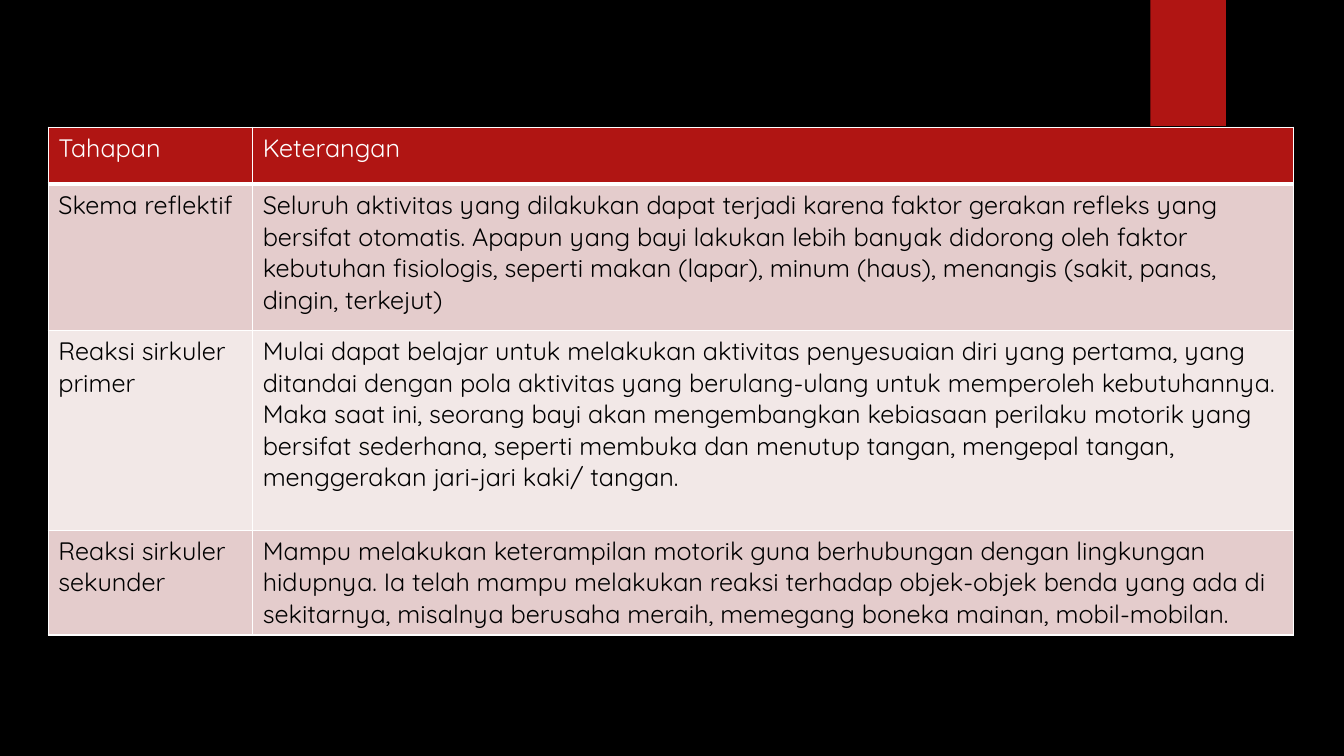
import lxml.etree
import pptx
import pptx.dml.color
import pptx.enum.shapes
import pptx.oxml.ns
import pptx.util

Pt = pptx.util.Pt
RGBColor = pptx.dml.color.RGBColor
qn = pptx.oxml.ns.qn

BLACK = RGBColor(0x00, 0x00, 0x00)
WHITE = RGBColor(0xFF, 0xFF, 0xFF)
RED = RGBColor(0xB0, 0x15, 0x13)
ROSE = RGBColor(0xE4, 0xCC, 0xCC)
PALE = RGBColor(0xF2, 0xE8, 0xE7)

ROWS = [
    ("Tahapan", "Keterangan"),
    ("Skema reflektif",
     "Seluruh aktivitas yang dilakukan dapat terjadi karena faktor gerakan refleks yang "
     "bersifat otomatis. Apapun yang bayi lakukan lebih banyak didorong oleh faktor "
     "kebutuhan fisiologis, seperti makan (lapar), minum (haus), menangis (sakit, panas, "
     "dingin, terkejut)"),
    ("Reaksi sirkuler primer",
     "Mulai dapat belajar untuk melakukan aktivitas penyesuaian diri yang pertama, yang "
     "ditandai dengan pola aktivitas yang berulang-ulang untuk memperoleh kebutuhannya. "
     "Maka saat ini, seorang bayi akan mengembangkan kebiasaan perilaku motorik yang "
     "bersifat sederhana, seperti membuka dan menutup tangan, mengepal tangan, "
     "menggerakan jari-jari kaki/ tangan."),
    ("Reaksi sirkuler sekunder",
     "Mampu melakukan keterampilan motorik guna berhubungan dengan lingkungan "
     "hidupnya. Ia telah mampu melakukan reaksi terhadap objek-objek benda yang ada di "
     "sekitarnya, misalnya berusaha meraih, memegang boneka mainan, mobil-mobilan."),
]


class Deck:
    font = {"name": "Quicksand", "size": Pt(18), "bold": False}

    def __init__(self, wide, high):
        self.show = pptx.Presentation()
        self.show.slide_width = Pt(wide)
        self.show.slide_height = Pt(high)
        self.slide = self.show.slides.add_slide(self.show.slide_layouts[6])

    def ground(self, color):
        fill = self.slide.background.fill
        fill.solid()
        fill.fore_color.rgb = color

    def block(self, box, color):
        kind = pptx.enum.shapes.MSO_SHAPE.RECTANGLE
        shape = self.slide.shapes.add_shape(kind, *map(Pt, box))
        shape.shadow.inherit = False
        shape.fill.solid()
        shape.fill.fore_color.rgb = color
        shape.line.fill.background()

    def edge(self, cell, side, width):
        props = cell._tc.get_or_add_tcPr()
        line = lxml.etree.SubElement(props, qn("a:ln" + side), w=str(Pt(width)))
        fill = lxml.etree.SubElement(line, qn("a:solidFill"))
        lxml.etree.SubElement(fill, qn("a:srgbClr"), val=str(WHITE))

    def cell(self, cell, text, fill, ink, edges):
        for side, width in edges.items():
            self.edge(cell, side, width)
        cell.fill.solid()
        cell.fill.fore_color.rgb = fill
        cell.text = text
        font = cell.text_frame.paragraphs[0].runs[0].font
        for key, value in self.font.items():
            setattr(font, key, value)
        font.color.rgb = ink

    def table(self, left, top, cols, highs, rows):
        box = map(Pt, (left, top, sum(cols), sum(highs)))
        table = self.slide.shapes.add_table(len(rows), len(cols), *box).table
        for col, width in zip(table.columns, cols):
            col.width = Pt(width)
        for r, (high, row) in enumerate(zip(highs, rows)):
            table.rows[r].height = Pt(high)
            head = r == 0
            fill = RED if head else (PALE, ROSE)[r % 2]
            ink = WHITE if head else BLACK
            edges = {"L": 1, "R": 1, "T": 3 if r == 1 else 1, "B": 3 if head else 1}
            for c, text in enumerate(row):
                self.cell(table.cell(r, c), text, fill, ink, edges)

    def save(self):
        self.show.save("out.pptx")


def main():
    deck = Deck(960, 540)
    deck.ground(BLACK)
    deck.block((821.7, 0, 54, 90), RED)
    deck.table(34.5, 90.8, (146, 743.2), (40.8, 104.4, 142.7, 74.3), ROWS)
    deck.save()


if __name__ == "__main__":
    main()
